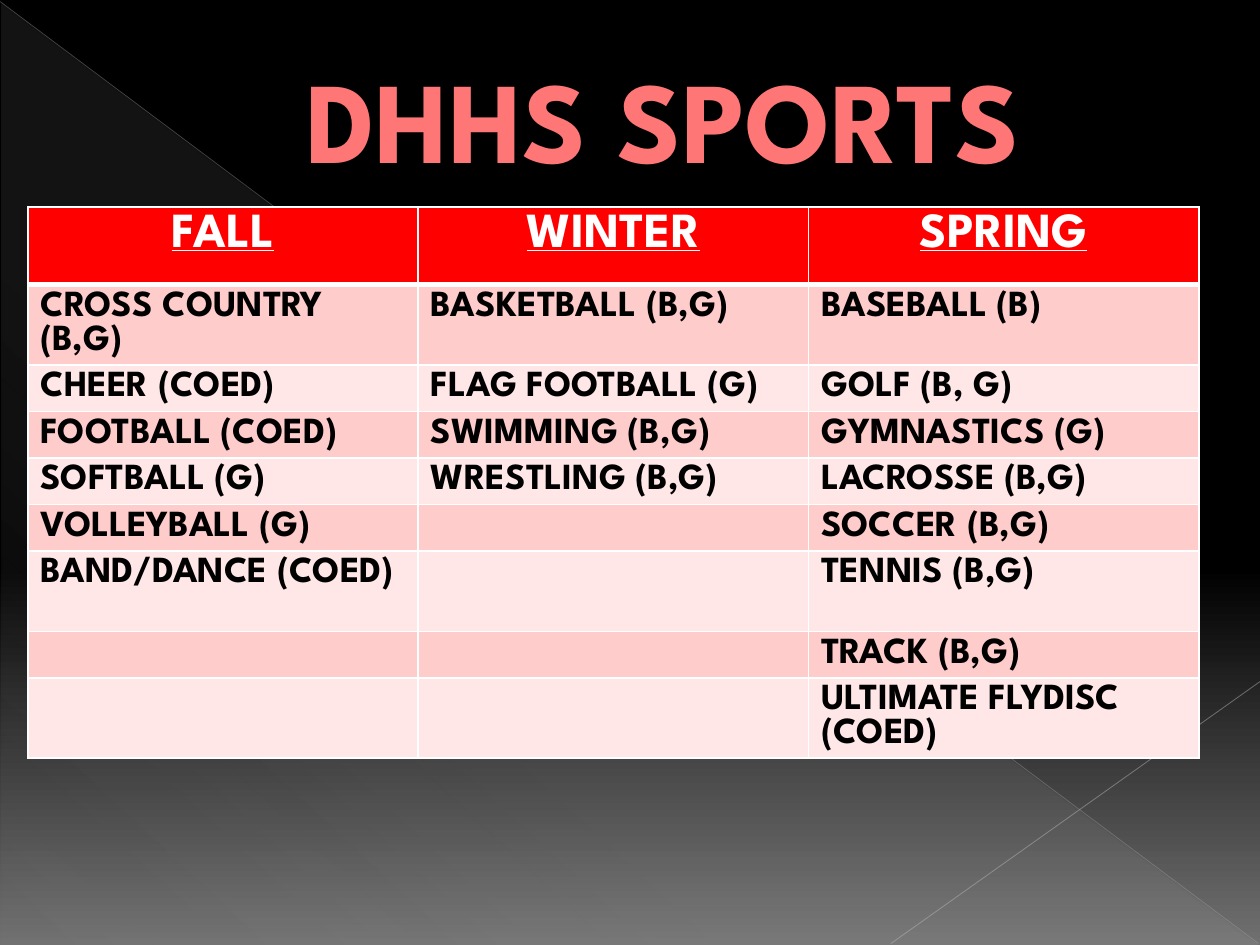
from dataclasses import dataclass

from lxml import etree
from pptx import Presentation
from pptx.dml.color import RGBColor
from pptx.enum.shapes import MSO_CONNECTOR, MSO_SHAPE
from pptx.enum.text import MSO_ANCHOR, PP_ALIGN
from pptx.oxml.ns import qn
from pptx.util import Cm, Pt

CENTER, LEFT = PP_ALIGN.CENTER, PP_ALIGN.LEFT
MIDDLE = MSO_ANCHOR.MIDDLE
STRAIGHT = MSO_CONNECTOR.STRAIGHT
TRIANGLE = MSO_SHAPE.RIGHT_TRIANGLE


@dataclass(frozen=True)
class Theme:
    font: str = "League Spartan"
    title: str = "FF7676"
    title_outline: str = "B10000"
    header: str = "FF0000"
    bands: tuple = ("FFCCCC", "FFE7E7")
    white: str = "FFFFFF"
    black: str = "000000"
    backdrop: str = "707070"
    wedge: str = "D2D2D2"
    title_size: int = 66
    header_size: int = 28
    body_size: int = 21
    empty_size: int = 12


T = Theme()


def add_color(parent, color, alpha=100):
    """Append an a:srgbClr with its opacity in percent."""
    clr = etree.SubElement(parent, qn("a:srgbClr"), val=color)
    if alpha < 100:
        etree.SubElement(clr, qn("a:alpha"), val=str(alpha * 1000))


def solid_to_gradient(parent, stops, angle):
    """Swap the solid fill of parent for stops of (position, colour, opacity)."""
    grad = etree.Element(qn("a:gradFill"), rotWithShape="1")
    gs_lst = etree.SubElement(grad, qn("a:gsLst"))
    for pos, color, alpha in stops:
        add_color(etree.SubElement(gs_lst, qn("a:gs"), pos=str(pos * 1000)), color, alpha)
    etree.SubElement(grad, qn("a:lin"), ang=str(angle * 60000), scaled="0")
    parent.replace(parent.find(qn("a:solidFill")), grad)


prs = Presentation()
prs.slide_width, prs.slide_height = Cm(25.4), Cm(19.05)
s = prs.slides.add_slide(prs.slide_layouts[5])

# Background
s.background.fill.solid()
s.background.fill.fore_color.rgb = RGBColor.from_string(T.black)
bg_pr = s.background._cSld.find(".//" + qn("p:bgPr"))
solid_to_gradient(bg_pr, [(0, T.black, 100), (60, T.black, 100), (100, T.backdrop, 100)], 90)

# Wedge and crossing lines
wedge = s.shapes.add_shape(TRIANGLE, Cm(0.03), Cm(0.05), Cm(25.35), Cm(19))
wedge.shadow.inherit = False
wedge.line.fill.background()
wedge.fill.solid()
wedge.fill.fore_color.rgb = RGBColor.from_string(T.wedge)
solid_to_gradient(wedge._element.spPr,
                  [(0, T.wedge, 10), (70, T.wedge, 8), (100, T.wedge, 1)], 133)

for x1, y1, x2, y2, color, width, alpha in [
    (0, 0.03, 25.37, 19.02, "B4B4B4", 0.39, 35),
    (25.4, 13.74, 17.96, 19.02, "BDBDBD", 0.47, 45),
]:
    line = s.shapes.add_connector(STRAIGHT, Cm(x1), Cm(y1), Cm(x2), Cm(y2))
    line.line.width = Pt(width)
    line.line.fill.solid()
    line.line.color.rgb = RGBColor.from_string(color)
    clr = line._element.spPr.find(".//" + qn("a:srgbClr"))
    etree.SubElement(clr, qn("a:alpha"), val=str(alpha * 1000))
    etree.SubElement(line._element.spPr, qn("a:effectLst"))

# Title
title = s.shapes.title
s.shapes._spTree.append(title._element)
title.left, title.top, title.width, title.height = Cm(1.27), Cm(0.43), Cm(22.86), Cm(3.89)
tf = title.text_frame
tf.word_wrap = True
tf.vertical_anchor = MIDDLE
p = tf.paragraphs[0]
p.alignment = CENTER
p._p.get_or_add_pPr().set("marL", str(Cm(1.35)))
r = p.add_run()
r.text = "DHHS SPORTS"
r.font.name, r.font.size, r.font.bold = T.font, Pt(T.title_size), True
r.font.color.rgb = RGBColor.from_string(T.title)
outline = etree.Element(qn("a:ln"), w=str(Pt(0.5)))
add_color(etree.SubElement(outline, qn("a:solidFill")), T.title_outline)
r.font._element.insert(0, outline)

# Sports by season
rows = [
    ("FALL", "WINTER", "SPRING"),
    ("CROSS COUNTRY (B,G)", "BASKETBALL (B,G)", "BASEBALL (B)"),
    ("CHEER (COED)", "FLAG FOOTBALL (G)", "GOLF (B, G)"),
    ("FOOTBALL (COED)", "SWIMMING (B,G)", "GYMNASTICS (G)"),
    ("SOFTBALL (G)", "WRESTLING (B,G)", "LACROSSE (B,G)"),
    ("VOLLEYBALL (G)", "", "SOCCER (B,G)"),
    ("BAND/DANCE (COED)", "", "TENNIS (B,G)"),
    ("", "", "TRACK (B,G)"),
    ("", "", "ULTIMATE FLYDISC (COED)"),
]
single, double = 0.93, 1.62
heights = [1.57, double] + [single] * 4 + [double, single, double]
col_width = 7.87

table = s.shapes.add_table(len(rows), 3, Cm(0.56), Cm(4.17),
                           Cm(3 * col_width), Cm(sum(heights))).table
for col in table.columns:
    col.width = Cm(col_width)

for i, (texts, height) in enumerate(zip(rows, heights)):
    table.rows[i].height = Cm(height)
    is_header = i == 0
    fill = T.header if is_header else T.bands[(i - 1) % 2]
    for j, text in enumerate(texts):
        cell = table.cell(i, j)
        cell.fill.solid()
        cell.fill.fore_color.rgb = RGBColor.from_string(fill)
        tc_pr = cell._tc.get_or_add_tcPr()
        for k, side in enumerate(("lnL", "lnR", "lnT", "lnB")):
            thick = (i, side) in ((0, "lnB"), (1, "lnT"))
            ln = etree.Element(qn("a:" + side), w=str(Pt(3 if thick else 1)))
            add_color(etree.SubElement(ln, qn("a:solidFill")), T.white)
            tc_pr.insert(k, ln)

        p = cell.text_frame.paragraphs[0]
        p.alignment = CENTER if is_header else LEFT
        if not text:
            etree.SubElement(p._p, qn("a:endParaRPr"), sz=str(T.empty_size * 100))
            continue
        r = p.add_run()
        r.text = text
        r.font.name, r.font.bold, r.font.underline = T.font, True, is_header
        r.font.size = Pt(T.header_size if is_header else T.body_size)
        r.font.color.rgb = RGBColor.from_string(T.white if is_header else T.black)

prs.save("out.pptx")
